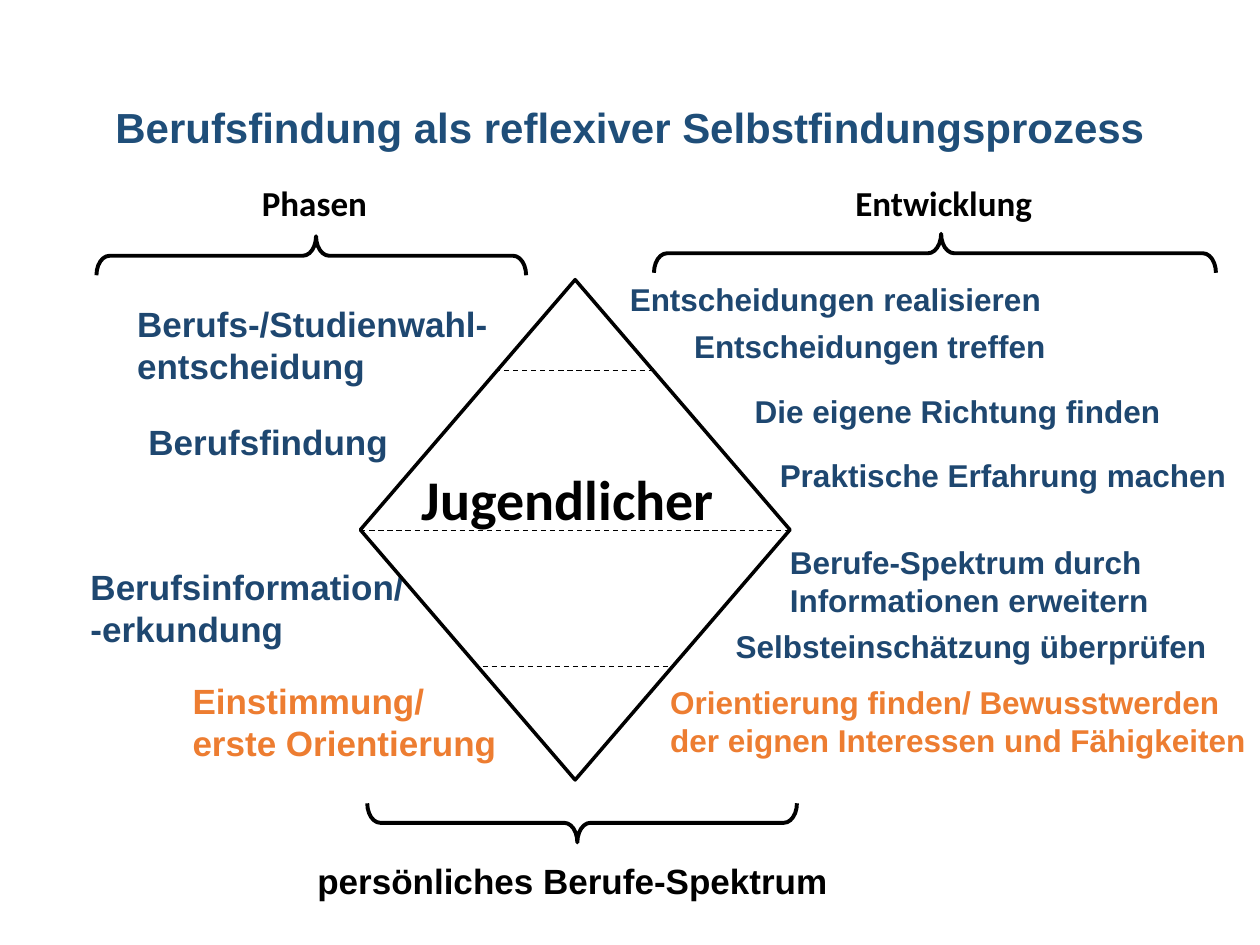
from pptx import Presentation
from pptx.dml.color import RGBColor
from pptx.enum.dml import MSO_LINE
from pptx.enum.shapes import MSO_CONNECTOR, MSO_SHAPE
from pptx.enum.text import PP_ALIGN
from pptx.oxml.ns import qn
from pptx.util import Inches, Pt

COLORS = {
    "title": "1F4E79",
    "step": "1E4770",
    "start": "ED7D31",
    "ink": "000000",
    "paper": "FFFFFF",
}

PHASES = [
    (0.99, 2.35, 3.0, 0.75, "Berufs-/Studienwahl-entscheidung", "step"),
    (1.08, 3.29, 2.67, 0.44, "Berufsfindung", "step"),
    (0.62, 4.44, 2.7, 0.73, "Berufsinformation/ -erkundung", "step"),
    (1.43, 5.34, 2.84, 0.74, "Einstimmung/\nerste Orientierung", "start"),
]

DEVELOPMENTS = [
    (4.9, 2.17, 3.61, 0.4, "Entscheidungen realisieren", "step"),
    (5.41, 2.55, 3.61, 0.4, "Entscheidungen treffen", "step"),
    (5.89, 3.06, 3.91, 0.4, "Die eigene Richtung finden", "step"),
    (6.09, 3.57, 3.85, 0.4, "Praktische Erfahrung machen", "step"),
    (6.17, 4.26, 3.48, 0.53, "Berufe-Spektrum durch Informationen erweitern", "step"),
    (5.74, 4.93, 4.41, 0.51, "Selbsteinschätzung überprüfen", "step"),
    (5.22, 5.37, 4.85, 0.67,
     "Orientierung finden/ Bewusstwerden der eignen Interessen und Fähigkeiten", "start"),
]

BRACES = [
    (4.62, 6.53, 3.41, 270),
    (2.47, 2.03, 3.41, 90),
    (7.42, 2.01, 4.46, 90),
]

LEVELS = [(3.93, 5.18, 2.94), (2.86, 6.27, 4.21), (3.83, 5.3, 5.29)]


def color(key):
    """Return the palette colour for a key."""
    return RGBColor.from_string(COLORS[key])


def add_label(slide, left, top, width, height, text, ink, size,
              font="Arial", align=PP_ALIGN.LEFT):
    """Add a bold, wrapping label."""
    label = slide.shapes.add_textbox(
        Inches(left), Inches(top), Inches(width), Inches(height))
    frame = label.text_frame
    frame.word_wrap = True
    frame.text = text
    for paragraph in frame.paragraphs:
        paragraph.alignment = align
        paragraph.font.name = font
        paragraph.font.size = Pt(size)
        paragraph.font.bold = True
        paragraph.font.color.rgb = color(ink)


def add_brace(slide, center_x, center_y, span, rotation, depth=0.31):
    """Add a horizontal brace around a centre point."""
    brace = slide.shapes.add_shape(
        MSO_SHAPE.LEFT_BRACE,
        Inches(center_x - depth / 2), Inches(center_y - span / 2),
        Inches(depth), Inches(span))
    brace.rotation = rotation
    brace.adjustments[0] = 0.335
    brace.adjustments[1] = 0.489
    brace.shadow.inherit = False
    brace.fill.background()
    brace.line.color.rgb = color("ink")
    brace.line.width = Pt(2.25)


def add_diamond(slide, left, top, width, height):
    """Add the outlined diamond that stands for the young person."""
    diamond = slide.shapes.add_shape(
        MSO_SHAPE.DIAMOND, Inches(left), Inches(top), Inches(width), Inches(height))
    diamond.shadow.inherit = False
    diamond.fill.solid()
    diamond.fill.fore_color.rgb = color("paper")
    diamond.line.color.rgb = color("ink")
    diamond.line.width = Pt(2)


def add_level(slide, start, end, height):
    """Add a dashed horizontal line across the diamond."""
    level = slide.shapes.add_connector(
        MSO_CONNECTOR.STRAIGHT,
        Inches(start), Inches(height), Inches(end), Inches(height))
    level.line.color.rgb = color("ink")
    level.line.width = Pt(0.75)
    level.line.dash_style = MSO_LINE.DASH
    properties = level._element.spPr
    properties.append(properties.makeelement(qn("a:effectLst"), {}))


def main():
    """Build and save the slide."""
    deck = Presentation()
    deck.slide_width = Inches(10)
    deck.slide_height = Inches(7.5)
    slide = deck.slides.add_slide(deck.slide_layouts[6])

    add_label(slide, 0, 0.76, 10, 0.5,
              "Berufsfindung als reflexiver Selbstfindungsprozess",
              "title", 24, align=PP_ALIGN.CENTER)
    for phase in PHASES:
        add_label(slide, *phase, size=20)
    for brace in BRACES:
        add_brace(slide, *brace)
    add_label(slide, 1.98, 1.39, 1.2, 0.44, "Phasen", "ink", 20, "Calibri")
    add_label(slide, 6.69, 1.39, 1.7, 0.44, "Entwicklung", "ink", 20, "Calibri")
    add_label(slide, 2.42, 6.77, 4.32, 0.44, "persönliches Berufe-Spektrum", "ink", 20)
    add_diamond(slide, 2.86, 2.22, 3.41, 3.97)
    for level in LEVELS:
        add_level(slide, *level)
    add_label(slide, 3.25, 3.64, 2.99, 0.64, "Jugendlicher", "ink", 32, "Calibri")
    for development in DEVELOPMENTS:
        add_label(slide, *development, size=18)

    deck.save("out.pptx")


if __name__ == "__main__":
    main()
